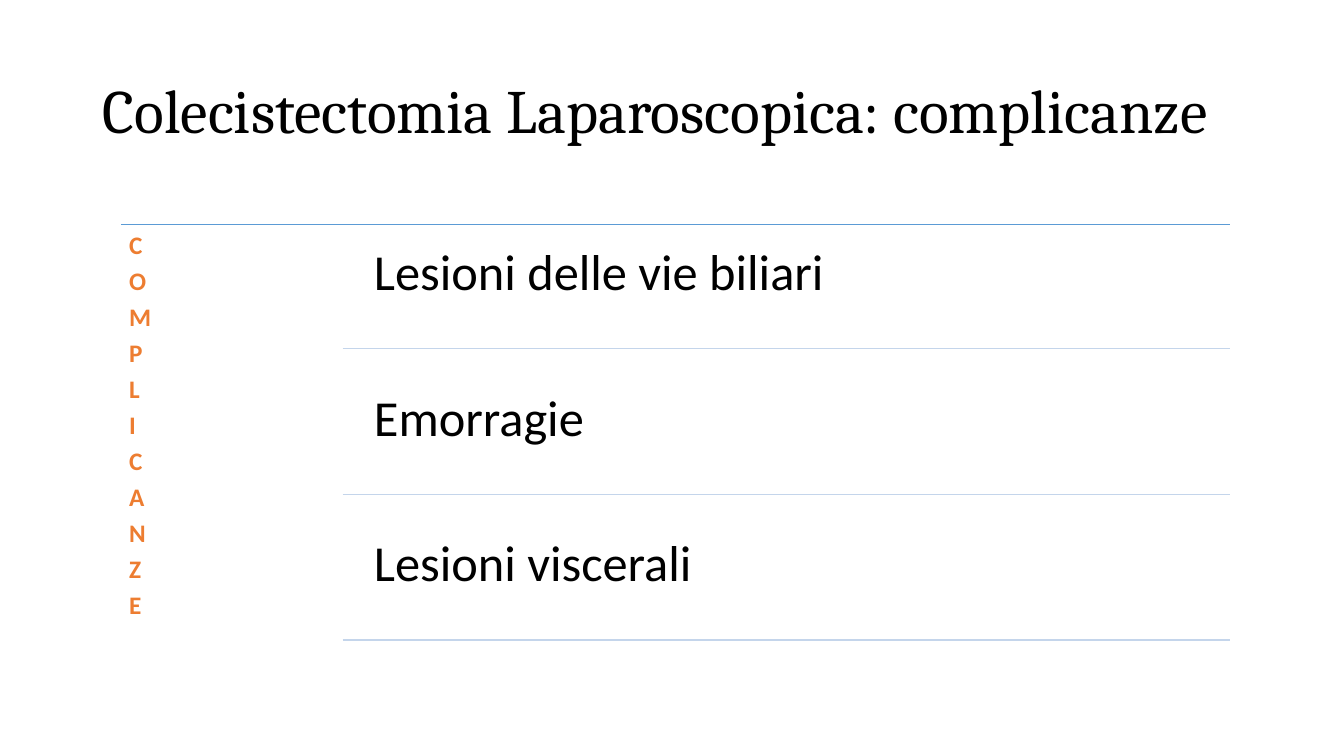
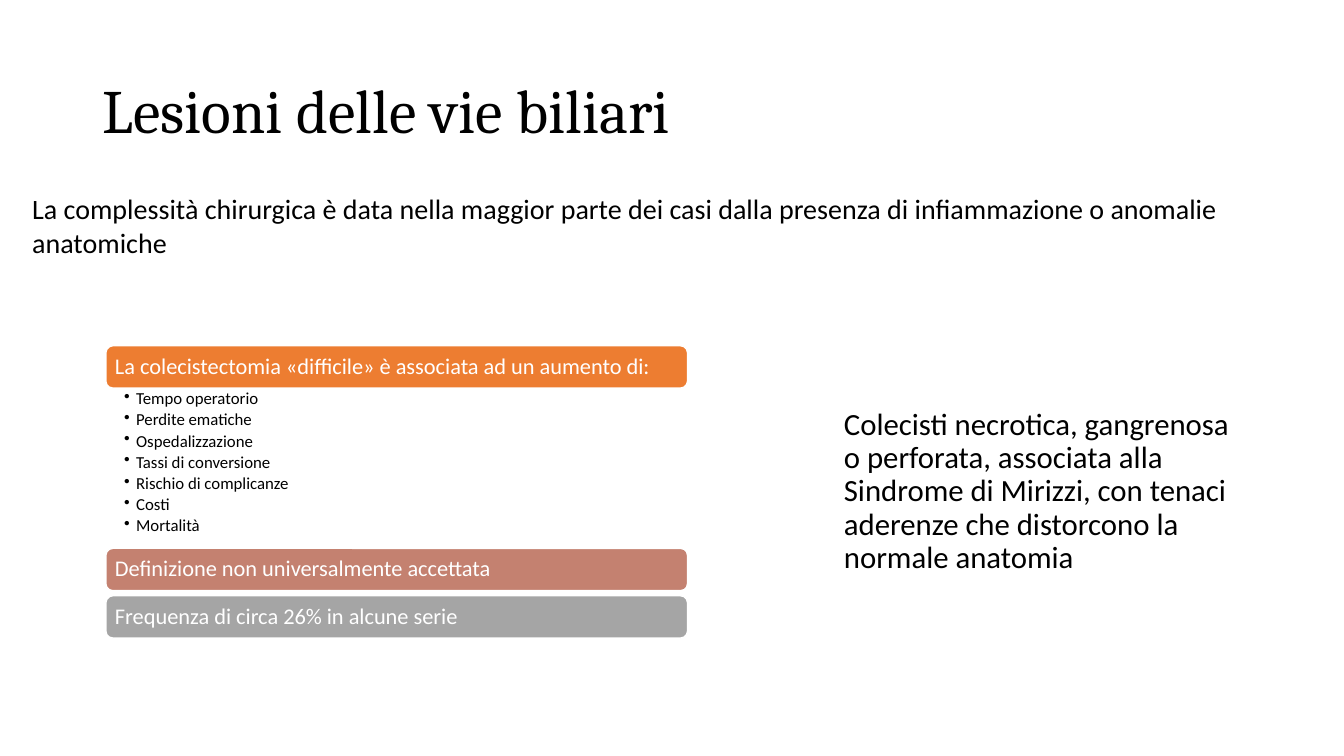
from lxml import etree
from pptx import Presentation
from pptx.dml.color import RGBColor
from pptx.enum.shapes import MSO_CONNECTOR, MSO_SHAPE
from pptx.enum.text import MSO_ANCHOR, PP_ALIGN
from pptx.oxml.ns import qn
from pptx.util import Inches, Pt

STRAIGHT = MSO_CONNECTOR.STRAIGHT
ROUNDED = MSO_SHAPE.ROUNDED_RECTANGLE
TOP, MIDDLE = MSO_ANCHOR.TOP, MSO_ANCHOR.MIDDLE
LEFT = PP_ALIGN.LEFT

BLACK, WHITE = "000000", "FFFFFF"
ORANGE, CLAY, GRAY = "ED7D31", "C48170", "A5A5A5"
BLUE, PALE_BLUE = "5B9BD5", "C4D5EB"
HEADING_FONT, BODY_FONT = "Cambria", "Calibri"
DEFAULT_INSETS = (0.1, 0.05, 0.1, 0.05)
BULLET_INDENT = 0.12


def color(value):
    return RGBColor.from_string(value)


class Deck:
    """Style and current slide; positions are percentages of the slide's size."""

    def __init__(self):
        self.presentation = Presentation()
        self.presentation.slide_width = Inches(13.33)
        self.presentation.slide_height = Inches(7.5)
        self.slide = None

    def x(self, share):
        return round(self.presentation.slide_width * share / 100)

    def y(self, share):
        return round(self.presentation.slide_height * share / 100)

    def box(self, left, top, width, height):
        return self.x(left), self.y(top), self.x(width), self.y(height)

    def add_slide(self, title):
        layout = self.presentation.slide_layouts[6]
        self.slide = self.presentation.slides.add_slide(layout)
        self.text((6.9, 5.33, 86.27, 19.33), [title], 44,
                  font=HEADING_FONT, anchor=MIDDLE)

    def fill_text(self, shape, lines, size, ink=BLACK, font=BODY_FONT,
                  bold=False, anchor=TOP, insets=DEFAULT_INSETS, spacing=0.9,
                  after=0, bullets=False):
        frame = shape.text_frame
        frame.word_wrap = True
        frame.vertical_anchor = anchor
        (frame.margin_left, frame.margin_top,
         frame.margin_right, frame.margin_bottom) = map(Inches, insets)
        for index, line in enumerate(lines):
            paragraph = frame.add_paragraph() if index else frame.paragraphs[0]
            paragraph.alignment = LEFT
            paragraph.line_spacing = spacing
            paragraph.space_after = Pt(after)
            if bullets:
                self.add_bullet(paragraph)
            run = paragraph.add_run()
            run.text = line
            run.font.name = font
            run.font.size = Pt(size)
            run.font.bold = bold
            run.font.color.rgb = color(ink)

    def add_bullet(self, paragraph):
        properties = paragraph._p.get_or_add_pPr()
        properties.set("marL", str(Inches(BULLET_INDENT)))
        properties.set("indent", str(-Inches(BULLET_INDENT)))
        etree.SubElement(properties, qn("a:buChar")).set("char", "•")

    def text(self, area, lines, size, **style):
        shape = self.slide.shapes.add_textbox(*self.box(*area))
        self.fill_text(shape, lines, size, **style)

    def panel(self, area, line, size, fill, outline=None, **style):
        shape = self.slide.shapes.add_shape(ROUNDED, *self.box(*area))
        shape.shadow.inherit = False
        shape.fill.solid()
        shape.fill.fore_color.rgb = color(fill)
        if outline:
            shape.line.color.rgb = color(outline)
            shape.line.width = Pt(1)
        else:
            shape.line.fill.background()
        self.fill_text(shape, [line], size, anchor=MIDDLE, **style)

    def rule(self, left, right, top, ink, weight):
        connector = self.slide.shapes.add_connector(
            STRAIGHT, self.x(left), self.y(top), self.x(right), self.y(top))
        connector.line.color.rgb = color(ink)
        connector.line.width = Pt(weight)
        etree.SubElement(connector._element.spPr, qn("a:effectLst"))


def complications_slide(deck):
    deck.add_slide("Colecistectomia Laparoscopica: complicanze")
    left, right, top, row_step = 9, 91.52, 29.73, 19.27
    deck.rule(left, right, top, BLUE, 0.5)
    deck.text((left, top, 16.5, 58.67), "COMPLICANZE", 18, ink=ORANGE,
              bold=True, insets=(0.08,) * 4, after=6.3)
    complications = ["Lesioni delle vie biliari", "Emorragie", "Lesioni viscerali"]
    for row, complication in enumerate(complications):
        offset = row * row_step
        deck.text((26.7, 30.67 + offset, 64.74, 18.27), [complication], 36,
                  insets=(0.15,) * 4)
        deck.rule(25.5, right, 46.13 + offset, PALE_BLUE, 1)


def bile_duct_slide(deck):
    deck.add_slide("Lesioni delle vie biliari")
    deck.text((1.65, 24.67, 96.7, 10.13),
              ["La complessità chirurgica è data nella maggior parte dei casi "
               "dalla presenza di infiammazione o anomalie anatomiche"],
              20, spacing=1)
    deck.panel((60.61, 51.2, 32.56, 27.73),
               "Colecisti necrotica, gangrenosa o perforata, associata alla "
               "Sindrome di Mirizzi, con tenaci aderenze che distorcono la "
               "normale anatomia",
               22, WHITE, insets=(0.19, 0.19, 0.09, 0.19))

    left, width, bar_height = 7.88, 43.28, 5.6
    bars = [
        (45.73, ORANGE, "La colecistectomia «difficile» è associata ad un aumento di:"),
        (72.53, CLAY, "Definizione non universalmente accettata"),
        (78.8, GRAY, "Frequenza di circa 26% in alcune serie"),
    ]
    for top, fill, label in bars:
        deck.panel((left, top, width, bar_height), label, 16, fill,
                   outline=WHITE, ink=WHITE, insets=(0.07,) * 4)
    risks = ["Tempo operatorio", "Perdite ematiche", "Ospedalizzazione",
             "Tassi di conversione", "Rischio di complicanze", "Costi", "Mortalità"]
    deck.text((left, bars[0][0] + bar_height, width, 21.2), risks, 12,
              insets=(0.18, 0.02, 0.12, 0.02), after=2.2, bullets=True)


def main():
    deck = Deck()
    complications_slide(deck)
    bile_duct_slide(deck)
    deck.presentation.save("out.pptx")


if __name__ == "__main__":
    main()
